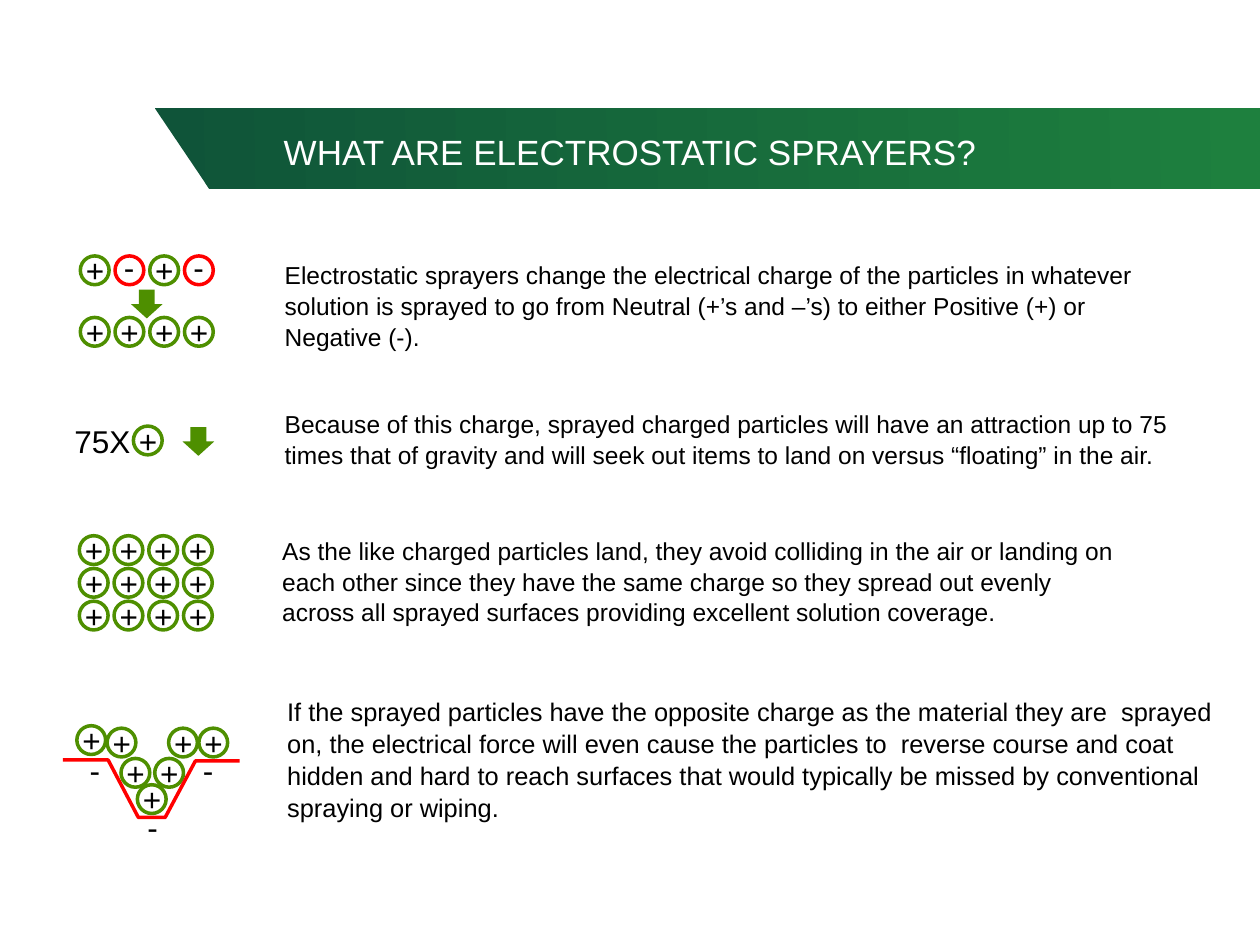
from dataclasses import dataclass

from pptx import Presentation
from pptx import util as u
from pptx.dml.color import RGBColor
from pptx.enum import shapes, text


@dataclass(frozen=True)
class Theme:
    """Colours, type sizes and repeated measures of the slide."""
    font: str = "Arial"
    ink: str = "000000"
    paper: str = "FFFFFF"
    positive: str = "4E8F00"
    negative: str = "FF0000"
    banner_start: str = "0F5439"
    banner_end: str = "1E803E"
    title_size: float = 20
    body_size: float = 14
    closing_size: float = 14.5
    sign_size: float = 18
    line_width: float = 2
    inset: float = 0.13
    diameter: float = 0.58
    column_pitch: float = 0.7
    row_pitch: float = 0.66


THEME = Theme()


def colour(code):
    """Turn a hex code into a colour."""
    return RGBColor.from_string(code)


def add_text(parent, words, left, top, width, height, *, size=THEME.body_size, ink=THEME.ink,
             wrap=True, grow=True, align=text.PP_ALIGN.LEFT,
             anchor=text.MSO_ANCHOR.TOP, spacing=None):
    """Add a text box with one formatted paragraph."""
    box = parent.add_textbox(u.Cm(left), u.Cm(top), u.Cm(width), u.Cm(height))
    frame = box.text_frame
    frame.margin_left = frame.margin_right = u.Cm(THEME.inset)
    frame.margin_top = frame.margin_bottom = u.Cm(THEME.inset)
    frame.word_wrap = wrap
    frame.vertical_anchor = anchor
    sizing = text.MSO_AUTO_SIZE
    frame.auto_size = sizing.SHAPE_TO_FIT_TEXT if grow else sizing.NONE
    para = frame.paragraphs[0]
    para.alignment = align
    para.line_spacing = spacing
    span = para.add_run()
    span.text = words
    span.font.name = THEME.font
    span.font.size = u.Pt(size)
    span.font.color.rgb = colour(ink)


def add_sign(parent, sign, left, top):
    """Add a plus or minus sign."""
    width = 0.63 if sign == "+" else 0.48
    add_text(parent, sign, left, top, width, 1.02, size=THEME.sign_size, wrap=False)


def add_particle(parent, sign, left, top):
    """Add a ringed particle with its charge."""
    size = u.Cm(THEME.diameter)
    ring = parent.add_shape(shapes.MSO_SHAPE.OVAL, u.Cm(left), u.Cm(top), size, size)
    ring.shadow.inherit = False
    ring.fill.solid()
    ring.fill.fore_color.rgb = colour(THEME.paper)
    ring.line.color.rgb = colour(THEME.positive if sign == "+" else THEME.negative)
    ring.line.width = u.Pt(THEME.line_width)
    shift, lift = (-0.02, 0.22) if sign == "+" else (0.05, 0.28)
    add_sign(parent, sign, left + shift, top - lift)


def add_particle_rows(parent, rows, left, top, pitch):
    """Add rows of particles on an even grid."""
    for row, signs in enumerate(rows):
        for column, sign in enumerate(signs):
            add_particle(parent, sign, left + column * THEME.column_pitch, top + row * pitch)


def add_arrow(parent, left, top):
    """Add a small down arrow."""
    arrow = parent.add_shape(shapes.MSO_SHAPE.DOWN_ARROW, u.Cm(left), u.Cm(top),
                             u.Cm(0.64), u.Cm(0.58))
    arrow.shadow.inherit = False
    arrow.fill.solid()
    arrow.fill.fore_color.rgb = colour(THEME.positive)
    arrow.line.fill.background()


def add_outline(parent, points, close):
    """Add a freeform through the given points."""
    corners = [(u.Cm(x), u.Cm(y)) for x, y in points]
    builder = parent.build_freeform(*corners[0])
    builder.add_line_segments(corners[1:], close=close)
    outline = builder.convert_to_shape()
    outline.shadow.inherit = False
    return outline


def add_banner(parent):
    """Add the gradient banner and its title."""
    banner = add_outline(parent, [(3.12, 2.18), (4.22, 3.81), (25.4, 3.81), (25.4, 2.18)], True)
    banner.line.fill.background()
    banner.fill.gradient()
    banner.fill.gradient_angle = 1
    for stop, code in zip(banner.fill.gradient_stops, (THEME.banner_start, THEME.banner_end)):
        stop.color.rgb = colour(code)
    add_text(parent, "WHAT ARE ELECTROSTATIC SPRAYERS?", 0.2, 2.18, 25, 1.75,
             size=THEME.title_size, ink=THEME.paper, grow=False,
             align=text.PP_ALIGN.CENTER, anchor=text.MSO_ANCHOR.MIDDLE)


def add_charging(parent):
    """Show neutral particles becoming positive."""
    group = parent.add_group_shape().shapes
    add_particle_rows(group, ["+-+-", "++++"], 1.62, 5.16, 1.24)
    add_arrow(group, 2.64, 5.84)


def add_attraction(parent):
    """Show the attraction compared with gravity."""
    group = parent.add_group_shape().shapes
    add_text(group, "75X", 1.37, 8.38, 1.8, 1.02, size=THEME.sign_size)
    add_particle(group, "+", 2.69, 8.59)
    add_arrow(group, 3.68, 8.61)


def add_trough(parent):
    """Show particles lining a negatively charged trough."""
    group = parent.add_group_shape().shapes
    for left, top in [(1.55, 14.63), (2.16, 14.68), (3.4, 14.68), (4.01, 14.68),
                      (2.44, 15.29), (3.12, 15.29), (2.77, 15.82)]:
        add_particle(group, "+", left, top)
    surface = add_outline(group, [(1.27, 15.32), (2.18, 15.32), (2.79, 16.48),
                                  (3.33, 16.48), (3.94, 15.34), (4.83, 15.34)], False)
    surface.fill.background()
    surface.line.color.rgb = colour(THEME.negative)
    surface.line.width = u.Pt(THEME.line_width)
    for left, top in [(1.68, 15.01), (3.96, 15.01), (2.84, 16.15)]:
        add_sign(group, "-", left, top)


def add_explanations(parent):
    """Add the four explanatory paragraphs."""
    body, closing = THEME.body_size, THEME.closing_size
    for left, top, width, height, size, words in [
        (5.61, 5.08, 18.08, 2.06, body,
         "Electrostatic sprayers change the electrical charge of the particles in whatever "
         "solution is sprayed to go from Neutral (+’s and –’s) to either Positive (+) or "
         "Negative (-)."),
        (5.61, 8.08, 18.08, 1.45, body,
         "Because of this charge, sprayed charged particles will have an attraction up to 75 "
         "times that of gravity and will seek out items to land on versus “floating” in the air."),
        (5.56, 10.64, 17.04, 2.06, body,
         "As the like charged particles land, they avoid colliding in the air or landing on "
         "each other since they have the same charge so they spread out evenly across all "
         "sprayed surfaces providing excellent solution coverage."),
        (5.66, 13.87, 18.97, 2.74, closing,
         "If the sprayed particles have the opposite charge as the material they are  sprayed "
         "on, the electrical force will even cause the particles to  reverse course and coat "
         "hidden and hard to reach surfaces that would typically be missed by conventional "
         "spraying or wiping."),
    ]:
        add_text(parent, words, left, top, width, height, size=size, spacing=1.05)


def main():
    """Build and save the slide."""
    deck = Presentation()
    deck.slide_width, deck.slide_height = u.Cm(25.4), u.Cm(19.05)
    page = deck.slides.add_slide(deck.slide_layouts[6]).shapes
    add_banner(page)
    add_charging(page)
    add_attraction(page)
    add_particle_rows(page.add_group_shape().shapes, ["++++"] * 3, 1.6, 10.8, THEME.row_pitch)
    add_trough(page)
    add_explanations(page)
    deck.save("out.pptx")


if __name__ == "__main__":
    main()
